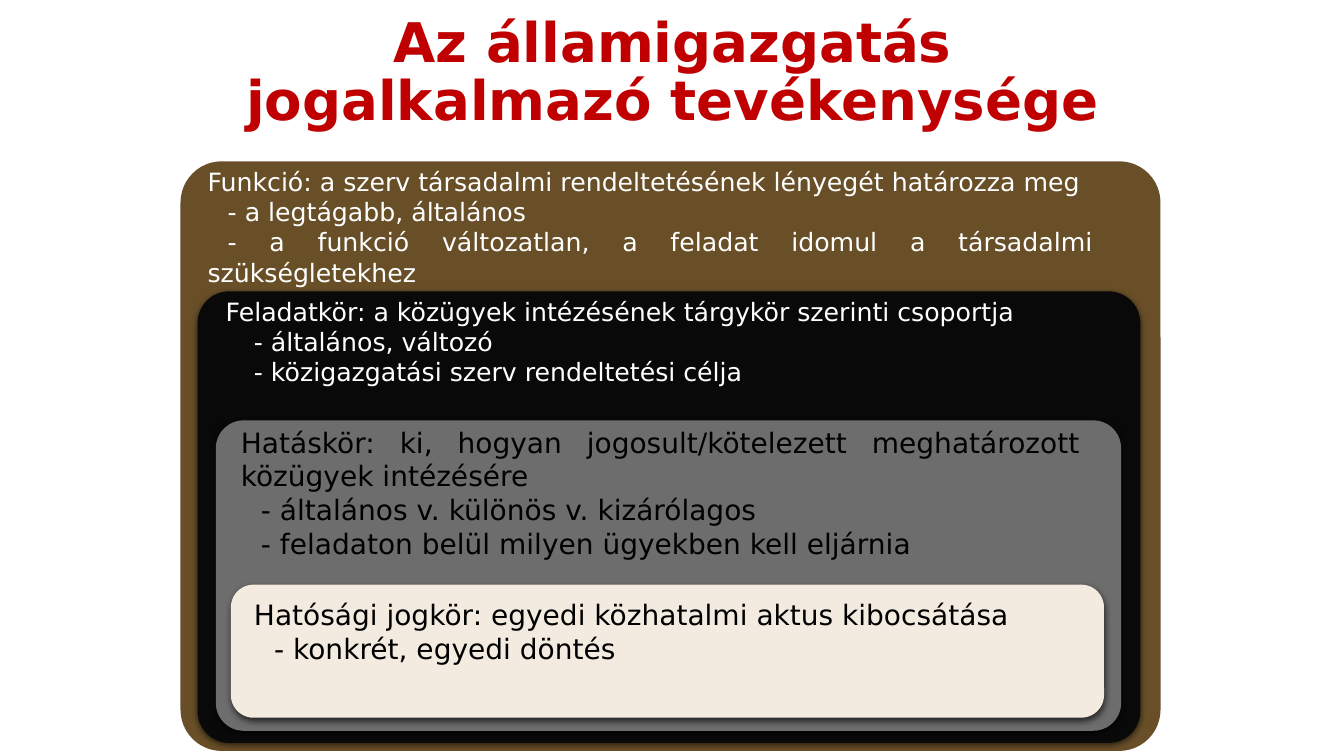
from dataclasses import dataclass

from lxml import etree
from pptx import Presentation
from pptx.dml.color import RGBColor
from pptx.enum.shapes import MSO_SHAPE
from pptx.enum.text import MSO_ANCHOR, MSO_AUTO_SIZE, PP_ALIGN
from pptx.oxml.ns import qn
from pptx.util import Emu, Pt

ROUND = MSO_SHAPE.ROUNDED_RECTANGLE
MIDDLE = MSO_ANCHOR.MIDDLE
GROW, FIXED = MSO_AUTO_SIZE.SHAPE_TO_FIT_TEXT, MSO_AUTO_SIZE.NONE
CENTER, JUSTIFY = PP_ALIGN.CENTER, PP_ALIGN.JUSTIFY
PX = 9144
FONT = "DejaVu Sans"
HEX = {
    "red": "C00000",
    "brown": "684F28",
    "black": "090909",
    "gray": "6D6D6D",
    "cream": "F3EBDF",
    "white": "FFFFFF",
    "ink": "000000",
}
Box = tuple[int, int, int, int]


@dataclass
class Panel:
    box: Box
    round: float
    fill: str
    shade: bool
    area: Box
    size: int
    color: str
    margin: int
    indent: int
    lines: list[str]


PANELS = [
    Panel((179, 160, 972, 585), 0.07, "brown", False,
          (196, 160, 898, 131), 18, "white", 0, 20,
          ["Funkció: a szerv társadalmi rendeltetésének lényegét határozza meg",
           "- a legtágabb, általános",
           "- a funkció változatlan, a feladat idomul a társadalmi szükségletekhez"]),
    Panel((196, 289, 935, 448), 0.07, "black", True,
          (214, 289, 866, 101), 18, "white", 28, 0,
          ["Feladatkör: a közügyek intézésének tárgykör szerinti csoportja",
           "- általános, változó",
           "- közigazgatási szerv rendeltetési célja"]),
    Panel((214, 417, 898, 308), 0.09, "gray", True,
          (229, 417, 852, 145), 20, "ink", 20, 0,
          ["Hatáskör: ki, hogyan jogosult/kötelezett meghatározott közügyek intézésére",
           "- általános v. különös v. kizárólagos",
           "- feladaton belül milyen ügyekben kell eljárnia"]),
    Panel((229, 580, 866, 132), 0.17, "cream", True,
          (242, 588, 825, 77), 20, "ink", 0, 20,
          ["Hatósági jogkör: egyedi közhatalmi aktus kibocsátása",
           "- konkrét, egyedi döntés"]),
]


def scale(box: Box) -> list[Emu]:
    return [Emu(n * PX) for n in box]


def style(obj, **form) -> None:
    for key, value in form.items():
        setattr(obj, key, value)


def ink(para, size: int, color: str, bold: bool = False) -> None:
    style(para.font, name=FONT, size=Pt(size), bold=bold)
    para.font.color.rgb = RGBColor.from_string(HEX[color])


def shade(shape) -> None:
    effect = shape._element.spPr.find(qn("a:effectLst"))
    outer = etree.SubElement(effect, qn("a:outerShdw"), blurRad=str(Pt(4.5)),
                             dist=str(Pt(1.5)), dir="5400000", rotWithShape="0")
    tint = etree.SubElement(outer, qn("a:srgbClr"), val=HEX["ink"])
    etree.SubElement(tint, qn("a:alpha"), val="63000")


def draw_title(slide, text: str, box: Box) -> None:
    title = slide.shapes.title
    left, top, width, height = scale(box)
    style(title, left=left, top=top, width=width, height=height)
    frame = title.text_frame
    frame.text = text
    style(frame, word_wrap=True, auto_size=FIXED, vertical_anchor=MIDDLE)
    para = frame.paragraphs[0]
    style(para, alignment=CENTER, line_spacing=Pt(41))
    ink(para, 39, "red", True)


def draw_panel(slide, panel: Panel) -> None:
    shape = slide.shapes.add_shape(ROUND, *scale(panel.box))
    shape.adjustments[0] = panel.round
    shape.shadow.inherit = False
    shape.fill.solid()
    shape.fill.fore_color.rgb = RGBColor.from_string(HEX[panel.fill])
    shape.line.fill.background()
    if panel.shade:
        shade(shape)
    frame = slide.shapes.add_textbox(*scale(panel.area)).text_frame
    style(frame, word_wrap=True, auto_size=GROW)
    for i, line in enumerate(panel.lines):
        para = frame.paragraphs[0] if i == 0 else frame.add_paragraph()
        para.text = line
        para.alignment = JUSTIFY
        if i:
            props = para._p.get_or_add_pPr()
            props.set("marL", str(panel.margin * PX))
            props.set("indent", str(panel.indent * PX))
        ink(para, panel.size, panel.color)


def main() -> None:
    deck = Presentation()
    style(deck, slide_width=Emu(1333 * PX), slide_height=Emu(750 * PX))
    slide = deck.slides.add_slide(deck.slide_layouts[5])
    draw_title(slide, "Az államigazgatás\vjogalkalmazó tevékenysége",
               (167, 0, 1000, 146))
    for panel in PANELS:
        draw_panel(slide, panel)
    deck.save("out.pptx")


if __name__ == "__main__":
    main()
